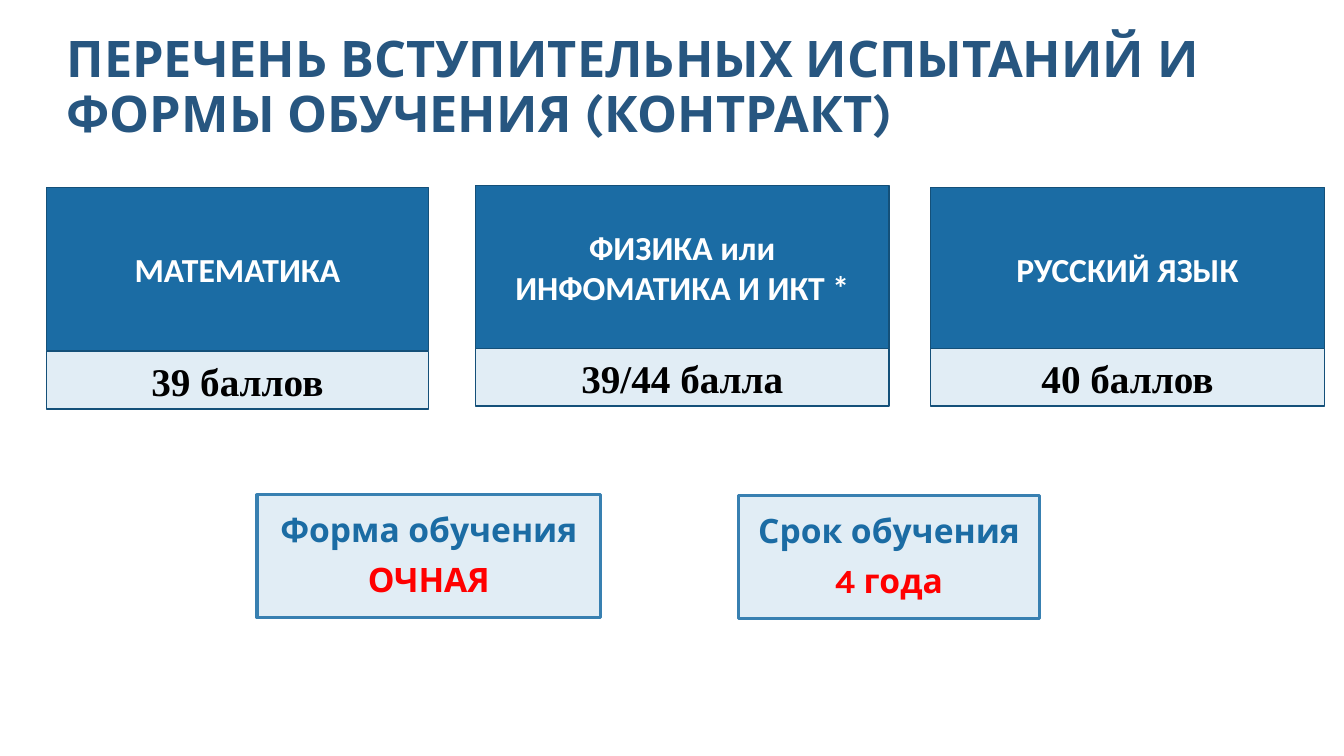
from pptx import Presentation
from pptx.dml.color import RGBColor
from pptx.enum import shapes, text
from pptx.oxml import xmlchemy as xc
from pptx.util import Pt

COLORS = {
    "title": "275680", "blue": "1B6CA4", "edge": "145079",
    "pale": "E1EDF5", "frame": "3880B1", "red": "FF0000",
    "white": "FFFFFF", "black": "000000",
}


def color(name):
    return RGBColor.from_string(COLORS[name])


def place(shape, left, top, width, height):
    shape.left, shape.top = Pt(left), Pt(top)
    shape.width, shape.height = Pt(width), Pt(height)


def paint(shape, fill, line, weight):
    shape.fill.solid()
    shape.fill.fore_color.rgb = color(fill)
    shape.line.color.rgb = color(line)
    shape.line.width = Pt(weight)


def add_run(para, words, size, face, tint):
    run = para.add_run()
    run.text = words
    font = run.font
    font.size, font.name, font.bold = Pt(size), face, True
    font.color.rgb = color(tint)


def set_title(title, words):
    place(title, 40.3, 20.2, 878.4, 86.4)
    frame = title.text_frame
    frame.vertical_anchor = text.MSO_ANCHOR.MIDDLE
    para = frame.paragraphs[0]
    para.alignment = text.PP_ALIGN.LEFT
    para.line_spacing = 0.9
    add_run(para, words, 36, "Karla", "title")


def set_fact(body, box, label, value):
    """Turn a body placeholder into a framed label with its value below."""
    place(body, *box)
    paint(body, "pale", "frame", 2.25)
    frame = body.text_frame
    frame.vertical_anchor = text.MSO_ANCHOR.MIDDLE
    lines = [(label, "blue", 0), (value, "red", 10)]
    for index, (words, tint, gap) in enumerate(lines):
        para = frame.add_paragraph() if index else frame.paragraphs[0]
        props = para._p.get_or_add_pPr()
        props.set("marL", "0")
        props.set("indent", "0")
        props.append(xc.OxmlElement("a:buNone"))
        para.alignment = text.PP_ALIGN.CENTER
        para.line_spacing = 0.9
        para.space_before = Pt(gap)
        add_run(para, words, 24, "Karla", tint)


def add_cell(slide, box, fill, words, size, face, tint):
    cell = slide.shapes.add_shape(
        shapes.MSO_SHAPE.RECTANGLE, *(Pt(side) for side in box))
    cell.shadow.inherit = False
    paint(cell, fill, "edge", 1)
    frame = cell.text_frame
    frame.word_wrap = True
    frame.vertical_anchor = text.MSO_ANCHOR.MIDDLE
    para = frame.paragraphs[0]
    para.alignment = text.PP_ALIGN.CENTER
    add_run(para, words, size, face, tint)


def add_exam(slide, left, top, width, base, subject, score):
    """Draw a subject block and the strip with its pass mark."""
    add_cell(slide, (left, top, width, 116.6), "blue",
             subject, 24, "Calibri", "white")
    add_cell(slide, (left, base, width, 41), "pale",
             score, 28, "Times New Roman", "black")


def main():
    deck = Presentation()
    deck.slide_width, deck.slide_height = Pt(960), Pt(540)
    slide = deck.slides.add_slide(deck.slide_layouts.get_by_name("Two Content"))
    title, form, term = list(slide.placeholders)[:3]

    set_title(title, "ПЕРЕЧЕНЬ ВСТУПИТЕЛЬНЫХ ИСПЫТАНИЙ И ФОРМЫ ОБУЧЕНИЯ (КОНТРАКТ)")
    set_fact(form, (183.6, 353.5, 245.5, 87.8), "Форма обучения", "ОЧНАЯ")
    set_fact(term, (527.8, 354.2, 214.6, 87.8), "Срок обучения", "4 года")

    exams = [
        (33.1, 133.9, 272.9, 251.3, "МАТЕМАТИКА", "39 баллов"),
        (339.8, 132.5, 295.2, 249.1, "ФИЗИКА или ИНФОМАТИКА И ИКТ *", "39/44 балла"),
        (664.6, 133.9, 281.5, 249.1, "РУССКИЙ ЯЗЫК", "40 баллов"),
    ]
    for exam in exams:
        add_exam(slide, *exam)

    deck.save("out.pptx")


if __name__ == "__main__":
    main()
